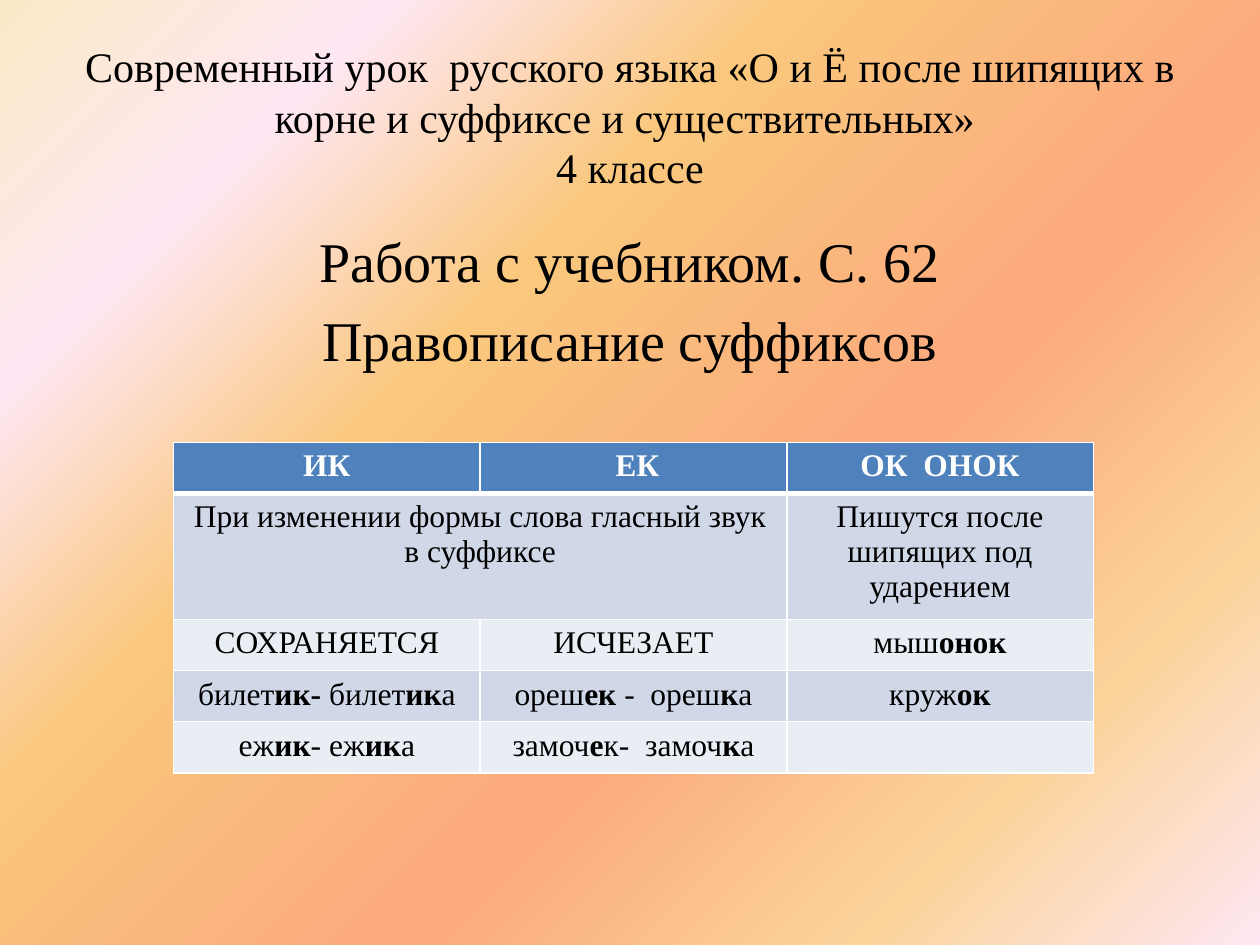
import copy
from dataclasses import dataclass

import pptx
import pptx.dml.color
import pptx.enum.text
import pptx.oxml
import pptx.oxml.ns
import pptx.util

Pt = pptx.util.Pt
FONT = "Times New Roman"
BLACK, WHITE = "000000", "FFFFFF"
HEADER_FILL = "4F81BD"
BAND_FILLS = ("D0D8E8", "E9EDF4")
COLUMN_WIDTH, ROW_HEIGHT = 175.2, 29.2


@dataclass(frozen=True)
class Stop:
    position: int
    color: str


@dataclass(frozen=True)
class Row:
    texts: tuple[str, ...]
    fill: str
    color: str = BLACK
    bold: bool = False
    bottom_border: int = 1


BACKGROUND = (
    Stop(0, "FBEAC7"),
    Stop(18, "FEE7F2"),
    Stop(36, "FAC77D"),
    Stop(61, "FBA97D"),
    Stop(82, "FBD49C"),
    Stop(100, "FEE7F2"),
)
BODY_TEXTS = (
    "При изменении формы слова гласный звук в суффиксе||Пишутся после шипящих под ударением",
    "СОХРАНЯЕТСЯ|ИСЧЕЗАЕТ|мыш*онок*",
    "билет*ик-* билет*ик*а|ореш*ек* -  ореш*к*а|круж*ок*",
    "еж*ик*- еж*ик*а|замоч*е*к-  замоч*к*а|",
)
ROWS = [Row(("ИК", " ЕК", "ОК  ОНОК"), HEADER_FILL, WHITE, True, 3)] + [
    Row(tuple(line.split("|")), BAND_FILLS[index % 2])
    for index, line in enumerate(BODY_TEXTS)
]


def rgb(value: str) -> pptx.dml.color.RGBColor:
    return pptx.dml.color.RGBColor.from_string(value)


def write(para, text: str, *, size: float, color: str = BLACK,
          bold: bool = False, space_before: float = 0) -> None:
    para.alignment = pptx.enum.text.PP_ALIGN.CENTER
    para.space_before = Pt(space_before)
    for line_index, line in enumerate(text.split("\n")):
        if line_index:
            para.add_line_break()
        for index, part in enumerate(line.split("*")):
            if not part:
                continue
            span = para.add_run()
            span.text = part
            span.font.name = FONT
            span.font.size = Pt(size)
            span.font.bold = bold or index % 2 == 1
            span.font.color.rgb = rgb(color)
    for line_break in para._p.findall(pptx.oxml.ns.qn("a:br")):
        line_break.insert(0, copy.deepcopy(para.runs[0]._r.rPr))


def paint_background(page, stops: tuple[Stop, ...], angle: int) -> None:
    page.background.fill.gradient()
    gradient = page.background._cSld.find(".//" + pptx.oxml.ns.qn("a:gradFill"))
    entries = "".join(
        f'<a:gs pos="{stop.position * 1000}"><a:srgbClr val="{stop.color}"/></a:gs>'
        for stop in stops
    )
    replacement = pptx.oxml.parse_xml(
        f'<a:gradFill {pptx.oxml.ns.nsdecls("a")} rotWithShape="1">'
        f'<a:gsLst>{entries}</a:gsLst>'
        f'<a:lin ang="{angle * 60000}" scaled="0"/></a:gradFill>'
    )
    gradient.getparent().replace(gradient, replacement)


def set_borders(cell, top: int, bottom: int) -> None:
    properties = cell._tc.get_or_add_tcPr()
    widths = {"lnL": 1, "lnR": 1, "lnT": top, "lnB": bottom}
    for index, (side, width) in enumerate(widths.items()):
        properties.insert(index, pptx.oxml.parse_xml(
            f'<a:{side} {pptx.oxml.ns.nsdecls("a")} w="{int(Pt(width))}">'
            f'<a:solidFill><a:srgbClr val="{WHITE}"/></a:solidFill></a:{side}>'
        ))


def draw_table(page, rows: list[Row], left: float, top: float) -> None:
    columns = len(rows[0].texts)
    table = page.shapes.add_table(
        len(rows), columns, Pt(left), Pt(top),
        Pt(COLUMN_WIDTH * columns), Pt(ROW_HEIGHT * len(rows)),
    ).table
    for column in table.columns:
        column.width = Pt(COLUMN_WIDTH)
    border_above = 1
    for row_index, row in enumerate(rows):
        table.rows[row_index].height = Pt(ROW_HEIGHT)
        for column_index, text in enumerate(row.texts):
            cell = table.cell(row_index, column_index)
            cell.fill.solid()
            cell.fill.fore_color.rgb = rgb(row.fill)
            set_borders(cell, border_above, row.bottom_border)
            write(cell.text_frame.paragraphs[0], text,
                  size=18, color=row.color, bold=row.bold)
        border_above = row.bottom_border
    table.cell(1, 0).merge(table.cell(1, 1))


def main() -> None:
    deck = pptx.Presentation()
    deck.slide_width, deck.slide_height = Pt(720), Pt(540)
    page = deck.slides.add_slide(deck.slide_layouts[5])
    paint_background(page, BACKGROUND, 45)

    title = page.shapes.title
    title.left, title.top, title.width, title.height = Pt(36), Pt(21.6), Pt(648), Pt(90)
    title.text_frame.vertical_anchor = pptx.enum.text.MSO_ANCHOR.MIDDLE
    write(title.text_frame.paragraphs[0],
          "Современный урок  русского языка «О и Ё после шипящих в корне "
          "и суффиксе и существительных» \n4 классе", size=24)

    box = page.shapes.add_textbox(Pt(36), Pt(126), Pt(648), Pt(356.4))
    box.text_frame.word_wrap = True
    heading = box.text_frame.paragraphs[0]
    write(heading, "Работа с учебником. С. 62", size=32, space_before=6.4)
    write(box.text_frame.add_paragraph(), "Правописание суффиксов",
          size=32, space_before=6.4)

    draw_table(page, ROWS, 99.2, 252.8)
    deck.save("out.pptx")


if __name__ == "__main__":
    main()
